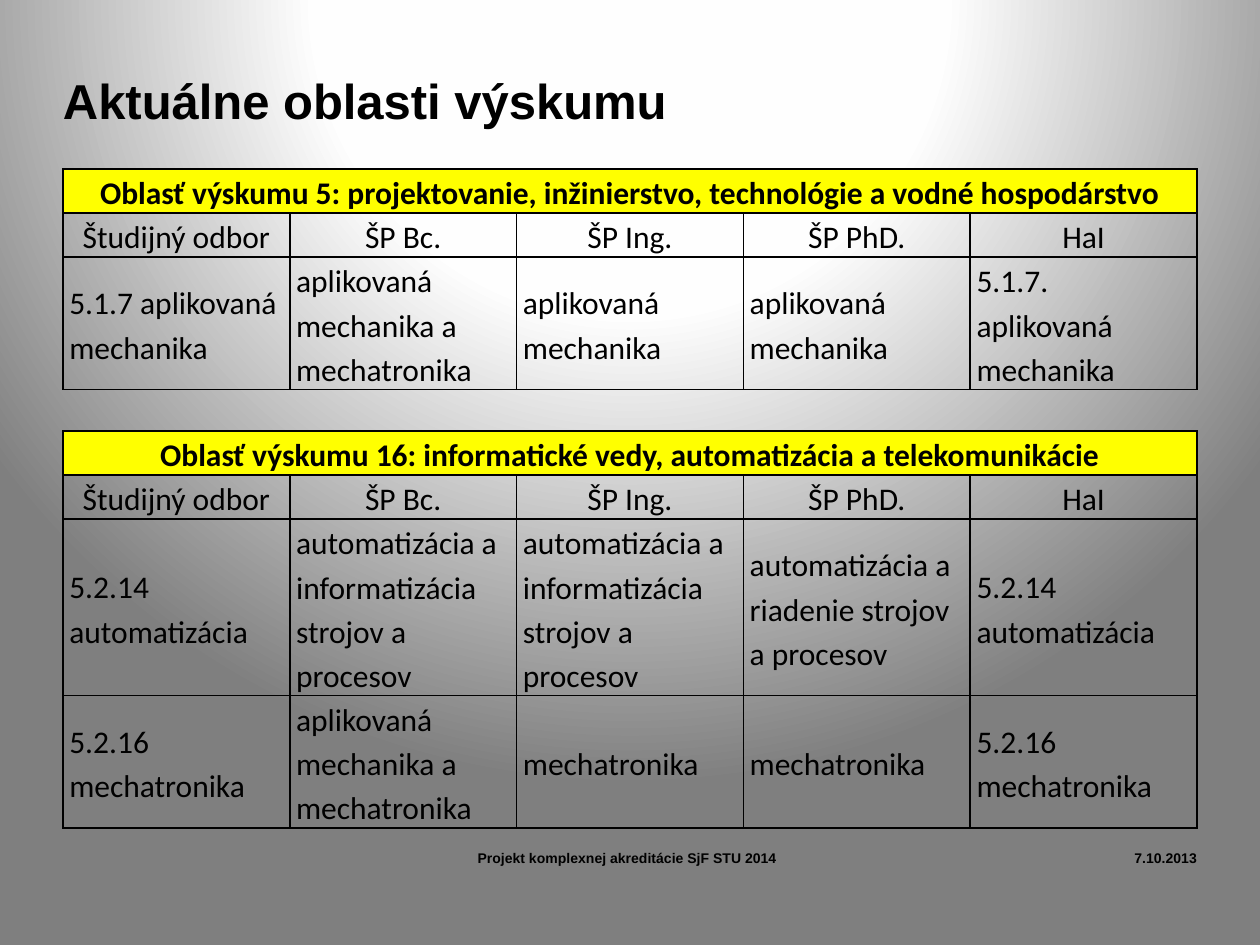
import lxml.etree
import pptx
import pptx.dml.color
import pptx.enum.text
import pptx.oxml
import pptx.oxml.ns
import pptx.util

ALIGN = pptx.enum.text.PP_ALIGN
ANCHOR = pptx.enum.text.MSO_ANCHOR
BLACK, YELLOW = "000000", "FFFF00"
GRID_COLUMNS, GRID_ROWS = 20, 15
LINE_ROWS = 0.7  # height of one line of table text

HEADINGS = ["Študijný odbor", "ŠP Bc.", "ŠP Ing.", "ŠP PhD.", "HaI"]
INFORMATICS = "automatizácia a informatizácia strojov a procesov"
MECHANICS = "aplikovaná mechanika"
MECHANICS_BC = "aplikovaná mechanika a mechatronika"


def color(value):
    return pptx.dml.color.RGBColor.from_string(value)


def write_text(frame, text, size=18, font="Calibri", bold=False,
               align=ALIGN.LEFT, spacing=None):
    paragraph = frame.paragraphs[0]
    paragraph.alignment = align
    if spacing:
        paragraph.line_spacing = spacing
    run = paragraph.add_run()
    run.text = text
    run.font.size = pptx.util.Pt(size)
    run.font.name = font
    run.font.bold = bold
    run.font.color.rgb = color(BLACK)


class SlideBuilder:
    """Places elements on a slide by grid columns and rows."""

    def __init__(self, presentation):
        self.slide = presentation.slides.add_slide(presentation.slide_layouts[6])
        self.column = presentation.slide_width / GRID_COLUMNS
        self.row = presentation.slide_height / GRID_ROWS

    def box(self, left, top, width, height):
        return (round(left * self.column), round(top * self.row),
                round(width * self.column), round(height * self.row))

    def background(self, stops):
        """Circular gradient centred above the slide."""
        fill = self.slide.background.fill
        fill.solid()
        fill.fore_color.rgb = color(stops[-1][1])
        properties = self.slide._element.cSld.bg.bgPr
        stop_xml = "".join(
            f'<a:gs pos="{share * 1000}"><a:srgbClr val="{value}"/></a:gs>'
            for share, value in stops)
        gradient = pptx.oxml.parse_xml(
            f'<a:gradFill {pptx.oxml.ns.nsdecls("a")} rotWithShape="1">'
            f'<a:gsLst>{stop_xml}</a:gsLst><a:path path="circle">'
            '<a:fillToRect l="50000" t="-80000" r="50000" b="180000"/>'
            '</a:path></a:gradFill>')
        properties.replace(properties[0], gradient)

    def text(self, place, text, anchor=ANCHOR.TOP, insets=(0, 0, 0, 0), **style):
        frame = self.slide.shapes.add_textbox(*self.box(*place)).text_frame
        frame.word_wrap = True
        frame.vertical_anchor = anchor
        (frame.margin_left, frame.margin_top, frame.margin_right,
         frame.margin_bottom) = map(pptx.util.Inches, insets)
        write_text(frame, text, font="Arial", bold=True, **style)

    def borders(self, cell):
        properties = cell._tc.get_or_add_tcPr()
        for side in ("lnL", "lnR", "lnT", "lnB"):
            line = lxml.etree.SubElement(
                properties, pptx.oxml.ns.qn(f"a:{side}"), w=str(pptx.util.Pt(1)))
            solid = lxml.etree.SubElement(line, pptx.oxml.ns.qn("a:solidFill"))
            lxml.etree.SubElement(solid, pptx.oxml.ns.qn("a:srgbClr"), val=BLACK)

    def cell(self, cell, text, fill=None, anchor=ANCHOR.TOP, **style):
        cell.margin_left = cell.margin_right = pptx.util.Inches(0.05)
        cell.margin_top = cell.margin_bottom = 0
        cell.vertical_anchor = anchor
        self.borders(cell)
        if fill:
            cell.fill.solid()
            cell.fill.fore_color.rgb = color(fill)
        else:
            cell.fill.background()
        if text:
            write_text(cell.text_frame, text, spacing=1.15, **style)

    def area_table(self, top, title, body, body_lines):
        """Yellow title row, heading row, then the study fields."""
        lines = [1, 1, *body_lines]
        count = len(HEADINGS)
        place = self.box(1, top, 18, sum(lines) * LINE_ROWS)
        table = self.slide.shapes.add_table(len(lines), count, *place).table
        table.first_row = table.horz_banding = False
        for row, line_count in zip(table.rows, lines):
            row.height = round(line_count * LINE_ROWS * self.row)

        title_style = {"fill": YELLOW, "bold": True, "align": ALIGN.CENTER}
        styles = [title_style, {"align": ALIGN.CENTER}]
        styles += [{"anchor": ANCHOR.MIDDLE}] * len(body)
        contents = [[title] + [""] * (count - 1), HEADINGS, *body]
        for row, (texts, style) in enumerate(zip(contents, styles)):
            for column, text in enumerate(texts):
                self.cell(table.cell(row, column), text, **style)
        table.cell(0, 0).merge(table.cell(0, count - 1))


def main():
    presentation = pptx.Presentation()
    presentation.slide_width = pptx.util.Inches(10)
    presentation.slide_height = pptx.util.Inches(7.5)
    builder = SlideBuilder(presentation)
    builder.background([(0, "FFFFFF"), (40, "FEFEFE"), (100, "7F7F7F")])

    # Footer and date
    builder.text((7.58, 13.48, 8.74, 0.8),
                 "Projekt komplexnej akreditácie SjF STU 2014", size=8)
    builder.text((16.52, 13.48, 2.48, 0.8), "7.10.2013", size=8, align=ALIGN.RIGHT)

    # Title
    builder.text((1, 0.9, 18, 1.36), "Aktuálne oblasti výskumu", size=28,
                 anchor=ANCHOR.MIDDLE, insets=(0, 0.05, 0.1, 0.05))

    # Research areas
    builder.area_table(
        2.68,
        "Oblasť výskumu 5: projektovanie, inžinierstvo, technológie a vodné hospodárstvo",
        [["5.1.7 aplikovaná mechanika", MECHANICS_BC, MECHANICS, MECHANICS,
          "5.1.7. aplikovaná mechanika"]],
        [3])
    builder.area_table(
        6.84,
        "Oblasť výskumu 16: informatické vedy, automatizácia a telekomunikácie",
        [["5.2.14 automatizácia", INFORMATICS, INFORMATICS,
          "automatizácia a riadenie strojov a procesov", "5.2.14 automatizácia"],
         ["5.2.16 mechatronika", MECHANICS_BC, "mechatronika", "mechatronika",
          "5.2.16 mechatronika"]],
        [4, 3])

    presentation.save("out.pptx")


if __name__ == "__main__":
    main()
